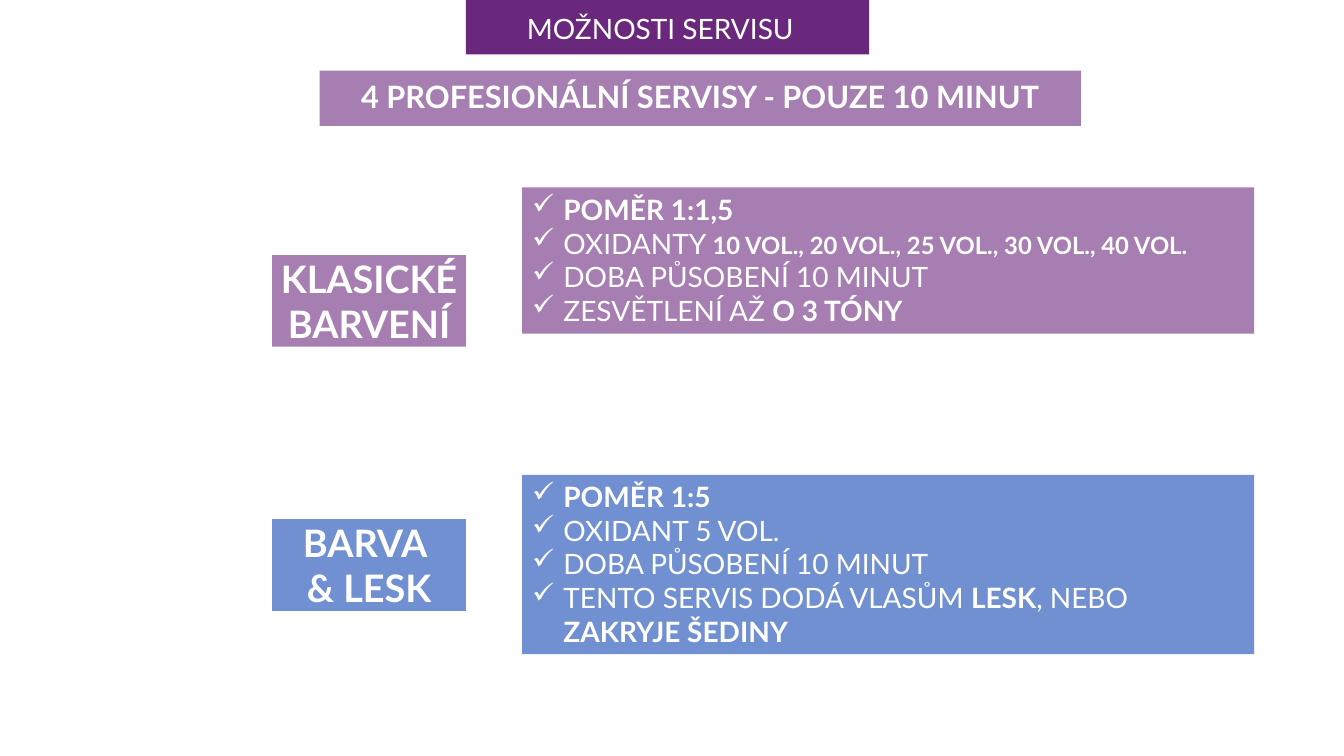
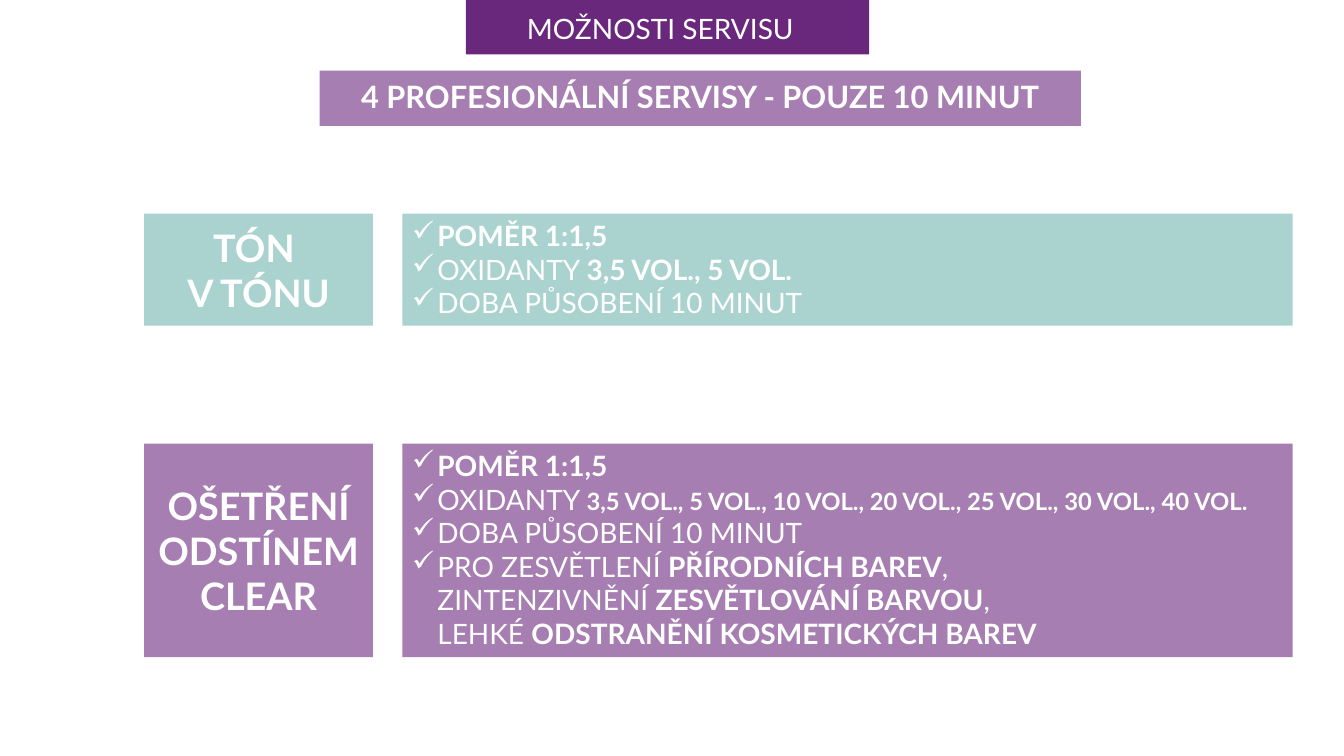
import lxml.etree
import pptx
import pptx.dml.color
import pptx.enum.shapes
import pptx.enum.text
import pptx.oxml.ns
import pptx.util

PX = 9144  # EMU per px, 100 px to the inch
FONT = "Lato"
COLORS = {
    "dark": "6A287D",
    "purple": "A67EB1",
    "blue": "7090D1",
    "teal": "AAD3D0",
    "white": "FFFFFF",
}
ALIGN = pptx.enum.text.PP_ALIGN
ANCHOR = pptx.enum.text.MSO_ANCHOR

TITLE = "MOŽNOSTI SERVISU"
SUBTITLE = "4 PROFESIONÁLNÍ SERVISY - POUZE 10 MINUT"
TITLE_BOX = (462, -1, 400, 55)
SUBTITLE_BOX = (317, 70, 755, 55)

# A bullet is a list of runs: plain text is regular, a (text, size) pair is bold.
DURATION = ["DOBA PŮSOBENÍ 10 MINUT"]
RATIO = [("POMĚR 1:1,5", 20)]
SLIDES = [
    {
        "label_column": (270, 192),
        "detail_column": (518, 726),
        "indent": 31,
        "services": [
            {
                "name": "KLASICKÉ BARVENÍ",
                "color": "purple",
                "label_row": (253, 91),
                "detail_row": (186, 145),
                "bullets": [
                    RATIO,
                    ["OXIDANTY ", ("10 VOL., 20 VOL., 25 VOL., 30 VOL., 40 VOL.", 17)],
                    DURATION,
                    ["ZESVĚTLENÍ AŽ ", ("O 3 TÓNY", 20)],
                ],
            },
            {
                "name": "BARVA \n& LESK",
                "color": "blue",
                "label_row": (515, 91),
                "detail_row": (471, 178),
                "bullets": [
                    [("POMĚR 1:5", 20)],
                    ["OXIDANT 5 VOL."],
                    DURATION,
                    ["TENTO SERVIS DODÁ VLASŮM ", ("LESK", 20), ", NEBO ",
                     ("ZAKRYJE ŠEDINY", 20)],
                ],
            },
        ],
    },
    {
        "label_column": (143, 227),
        "detail_column": (399, 883),
        "indent": 25,
        "services": [
            {
                "name": "TÓN \nV TÓNU",
                "color": "teal",
                "label_row": (212, 111),
                "detail_row": (212, 111),
                "bullets": [
                    RATIO,
                    ["OXIDANTY ", ("3,5 VOL., 5 VOL.", 20)],
                    DURATION,
                ],
            },
            {
                "name": "OŠETŘENÍ ODSTÍNEM CLEAR",
                "color": "purple",
                "label_row": (440, 212),
                "detail_row": (440, 212),
                "bullets": [
                    RATIO,
                    ["OXIDANTY ",
                     ("3,5 VOL., 5 VOL., 10 VOL., 20 VOL., 25 VOL., 30 VOL., 40 VOL.", 17)],
                    DURATION,
                    ["PRO ZESVĚTLENÍ ", ("PŘÍRODNÍCH BAREV", 20),
                     ", \nZINTENZIVNĚNÍ ", ("ZESVĚTLOVÁNÍ BARVOU", 20),
                     ", \nLEHKÉ ", ("ODSTRANĚNÍ KOSMETICKÝCH BAREV", 20)],
                ],
            },
        ],
    },
]


def px(length):
    return pptx.util.Emu(length * PX)


def rgb(name):
    return pptx.dml.color.RGBColor.from_string(COLORS[name])


def add_run(paragraph, text, size, bold):
    """Append formatted text, turning each newline into a line break."""
    for index, line in enumerate(text.split("\n")):
        if index:
            paragraph.add_line_break()
        run = paragraph.add_run()
        run.text = line
        run.font.name = FONT
        run.font.size = pptx.util.Pt(size)
        run.font.bold = bold
        run.font.color.rgb = rgb("white")


def add_check_mark(paragraph, indent):
    properties = paragraph._p.get_or_add_pPr()
    properties.set("marL", str(px(indent)))
    properties.set("indent", str(-px(indent)))
    bullet = lxml.etree.SubElement(properties, pptx.oxml.ns.qn("a:buChar"))
    bullet.set("char", "✓")


def write_text(shape, paragraphs, *, size=20, bold=False, align=ALIGN.CENTER,
               anchor=ANCHOR.MIDDLE, insets=(3, 3, 3, 3), line_spacing=1.0, indent=0):
    """Fill a shape with paragraphs, each a list of runs; insets run left, top, right, bottom."""
    frame = shape.text_frame
    frame.word_wrap = True
    frame.auto_size = pptx.enum.text.MSO_AUTO_SIZE.NONE
    frame.vertical_anchor = anchor
    (frame.margin_left, frame.margin_top,
     frame.margin_right, frame.margin_bottom) = map(px, insets)
    for index, runs in enumerate(paragraphs):
        paragraph = frame.add_paragraph() if index else frame.paragraphs[0]
        paragraph.alignment = align
        paragraph.line_spacing = line_spacing
        if indent:
            add_check_mark(paragraph, indent)
        for run in runs:
            if isinstance(run, tuple):
                add_run(paragraph, *run, True)
            else:
                add_run(paragraph, run, size, bold)


def place(shape, box, color):
    shape.left, shape.top, shape.width, shape.height = map(px, box)
    shape.fill.solid()
    shape.fill.fore_color.rgb = rgb(color)
    shape.line.fill.background()


def add_band(slide, box, color):
    band = slide.shapes.add_shape(
        pptx.enum.shapes.MSO_SHAPE.RECTANGLE, *map(px, box))
    band.shadow.inherit = False
    place(band, box, color)
    return band


def add_header(slide):
    title = slide.shapes.title
    place(title, TITLE_BOX, "dark")
    write_text(title, [[TITLE]], insets=(3, 10, 17, 3), line_spacing=0.9)
    subtitle = add_band(slide, SUBTITLE_BOX, "purple")
    write_text(subtitle, [[SUBTITLE]], size=22, bold=True, line_spacing=0.9)


def add_service(slide, service, content):
    boxes = {}
    for part in ("label", "detail"):
        left, width = content[part + "_column"]
        top, height = service[part + "_row"]
        boxes[part] = add_band(slide, (left, top, width, height), service["color"])
    write_text(boxes["label"], [[service["name"]]], size=27, bold=True)
    write_text(boxes["detail"], service["bullets"], align=ALIGN.LEFT,
               anchor=ANCHOR.TOP, insets=(10, 5, 10, 5), indent=content["indent"])


def main():
    presentation = pptx.Presentation()
    presentation.slide_width = px(1333)
    presentation.slide_height = px(750)
    title_only = presentation.slide_layouts[5]
    for content in SLIDES:
        slide = presentation.slides.add_slide(title_only)
        add_header(slide)
        for service in content["services"]:
            add_service(slide, service, content)
    presentation.save("out.pptx")


if __name__ == "__main__":
    main()
